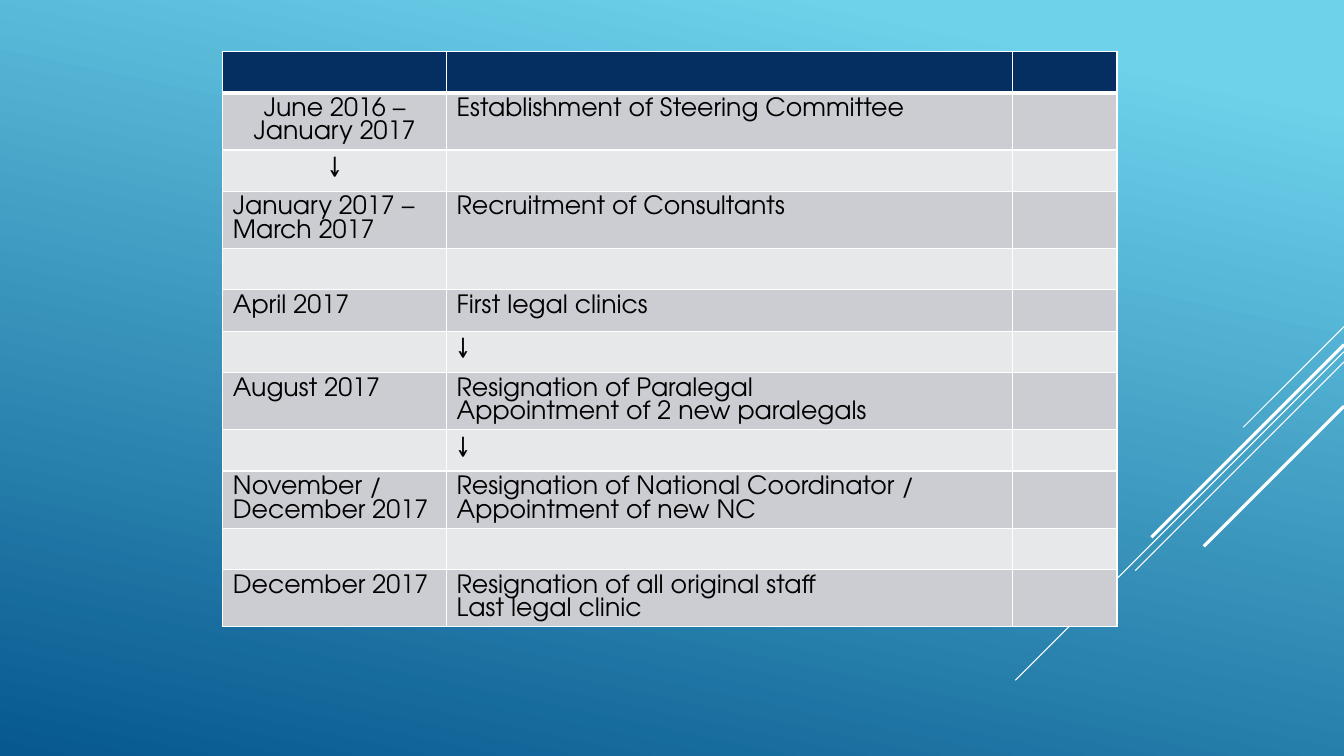
from dataclasses import dataclass

from lxml.etree import SubElement
from pptx import Presentation
from pptx.dml.color import RGBColor
from pptx.enum.shapes import MSO_CONNECTOR
from pptx.enum.text import PP_ALIGN
from pptx.oxml.ns import qn
from pptx.util import Inches, Pt

SLIDE_W, SLIDE_H = Inches(13.33), Inches(7.5)
FONT = "TeX Gyre Adventor"

SKY = RGBColor(0x6E, 0xD2, 0xEB)
OCEAN = RGBColor(0x06, 0x58, 0x8E)
NAVY = RGBColor(0x05, 0x2F, 0x61)
BAND_DARK = RGBColor(0xCC, 0xCD, 0xD2)
BAND_LIGHT = RGBColor(0xE7, 0xE8, 0xEA)
WHITE = RGBColor(0xFF, 0xFF, 0xFF)
BLACK = RGBColor(0x00, 0x00, 0x00)

# Table geometry in percent of the slide's width or height
TABLE_LEFT, TABLE_TOP = 16.58, 6.8
COLUMN_WIDTHS = (16.65, 42.08, 7.8)
ROW_HEIGHT = 5.47


@dataclass(frozen=True)
class Ray:
    """A 45-degree line falling leftwards from the slide's right edge."""
    top: float  # percent of slide height
    run: float  # percent of slide width
    weight: float  # points


@dataclass(frozen=True)
class Step:
    """One table row; a line break in the event starts a new paragraph."""
    date: str = ""
    event: str = ""
    date_align: PP_ALIGN = PP_ALIGN.LEFT


RAYS = (
    Ray(43.2, 7.5, 0.75),
    Ray(46.53, 24.45, 0.75),
    Ray(47.87, 15.53, 0.75),
    Ray(45.6, 14.33, 2.25),
    Ray(53.73, 10.43, 2.25),
)

STEPS = (
    Step(),
    Step("June 2016 – January 2017", "Establishment of Steering Committee", PP_ALIGN.CENTER),
    Step("↓", date_align=PP_ALIGN.CENTER),
    Step("January 2017 – March 2017", "Recruitment of Consultants"),
    Step(),
    Step("April 2017", "First legal clinics"),
    Step(event="↓"),
    Step("August 2017", "Resignation of Paralegal\nAppointment of 2 new paralegals"),
    Step(event="↓"),
    Step("November / December 2017",
         "Resignation of National Coordinator / Appointment of new NC"),
    Step(),
    Step("December 2017", "Resignation of all original staff\nLast legal clinic"),
)


def across(percent: float) -> int:
    return round(SLIDE_W * percent / 100)


def down(percent: float) -> int:
    return round(SLIDE_H * percent / 100)


def write(tf, text: str, *, size: float = 18, color: RGBColor = BLACK,
          align: PP_ALIGN = PP_ALIGN.LEFT) -> None:
    for i, line in enumerate(text.split("\n")):
        p = tf.paragraphs[0] if i == 0 else tf.add_paragraph()
        p.alignment = align
        r = p.add_run()
        r.text = line
        r.font.name = FONT
        r.font.size = Pt(size)
        r.font.color.rgb = color


def add_ray(slide, ray: Ray) -> None:
    y, run = down(ray.top), across(ray.run)
    sp = slide.shapes.add_connector(MSO_CONNECTOR.STRAIGHT, SLIDE_W, y, SLIDE_W - run, y + run)
    sp.line.color.rgb = WHITE
    sp.line.width = Pt(ray.weight)
    SubElement(sp._element.spPr, qn("a:effectLst"))


def set_borders(cell, top: float, bottom: float) -> None:
    tc_pr = cell._tc.get_or_add_tcPr()
    for side, weight in (("L", 1), ("R", 1), ("T", top), ("B", bottom)):
        ln = SubElement(tc_pr, qn(f"a:ln{side}"), w=str(Pt(weight)))
        SubElement(SubElement(ln, qn("a:solidFill")), qn("a:srgbClr"), val=str(WHITE))


def add_timeline(slide, steps: tuple[Step, ...]) -> None:
    frame = slide.shapes.add_table(
        len(steps), len(COLUMN_WIDTHS), across(TABLE_LEFT), down(TABLE_TOP),
        across(sum(COLUMN_WIDTHS)), down(ROW_HEIGHT * len(steps)))
    table = frame.table
    for column, width in zip(table.columns, COLUMN_WIDTHS):
        column.width = across(width)
    for i, step in enumerate(steps):
        table.rows[i].height = down(ROW_HEIGHT)
        fill = NAVY if i == 0 else BAND_DARK if i % 2 else BAND_LIGHT
        for cell in table.rows[i].cells:
            # The rule under the header is heavier
            set_borders(cell, top=3 if i == 1 else 1, bottom=3 if i == 0 else 1)
            cell.fill.solid()
            cell.fill.fore_color.rgb = fill
        if step.date:
            write(table.cell(i, 0).text_frame, step.date, align=step.date_align)
        if step.event:
            write(table.cell(i, 1).text_frame, step.event)


def main() -> None:
    prs = Presentation()
    prs.slide_width, prs.slide_height = SLIDE_W, SLIDE_H
    slide = prs.slides.add_slide(prs.slide_layouts[6])

    # Background gradient, light at the top right
    fill = slide.background.fill
    fill.gradient()
    fill.gradient_angle = 258
    for stop, position, color in zip(fill.gradient_stops, (0.1, 1), (SKY, OCEAN)):
        stop.position = position
        stop.color.rgb = color

    # Decorative rays behind the table
    for ray in RAYS:
        add_ray(slide, ray)

    # Timeline table
    add_timeline(slide, STEPS)

    prs.save("out.pptx")


if __name__ == "__main__":
    main()
